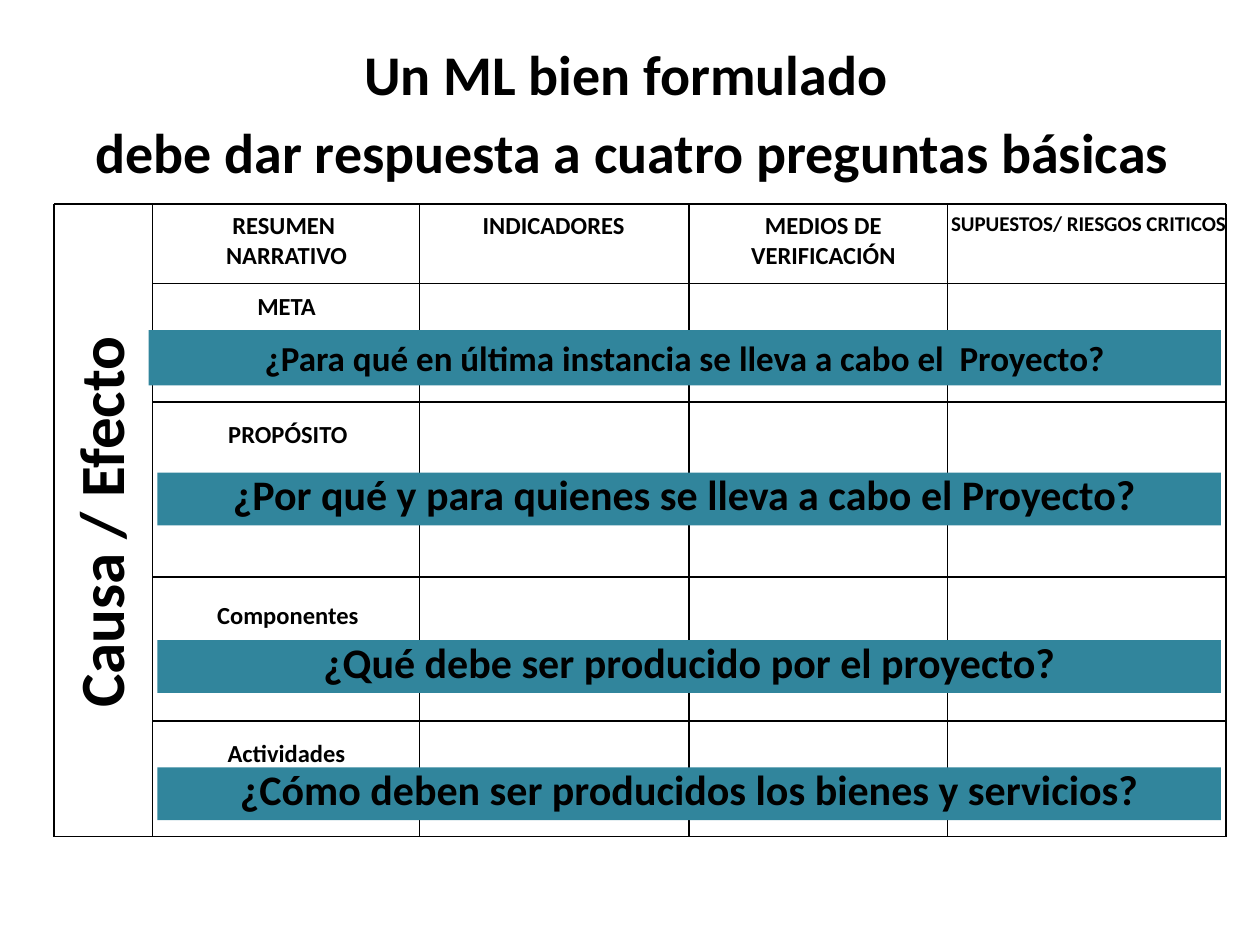
from dataclasses import dataclass

from lxml.etree import SubElement
from pptx import Presentation
from pptx.dml.color import RGBColor
from pptx.enum.shapes import MSO_CONNECTOR, MSO_SHAPE
from pptx.enum.text import MSO_ANCHOR, MSO_AUTO_SIZE, PP_ALIGN
from pptx.oxml.ns import qn
from pptx.util import Inches, Pt

FONT = "Calibri"
BLACK = "000000"
TEAL = "31859C"

# Grid of the matrix
LEFT, RIGHT = 0.43, 9.73
TOP, BOTTOM = 1.62, 6.64
COLUMN_LINES = [LEFT, 1.21, 3.33, 5.47, 7.52, RIGHT]
INNER_ROW_LINES = [2.25, 3.19, 4.58, 5.72]
HEADER_HEIGHT = 0.63
LABEL_WIDTH, LABEL_HEIGHT = 2.13, 0.93
BAR_RIGHT = 9.69


@dataclass
class Label:
    text: str
    left: float
    top: float
    width: float = LABEL_WIDTH
    height: float = LABEL_HEIGHT
    size: int = 14
    rotation: int = 0


@dataclass
class Question:
    text: str
    top: float
    left: float = 1.25
    height: float = 0.42
    size: int = 24
    line_spacing: float = 0.8


HEADERS = [
    Label("RESUMEN \vNARRATIVO", 1.21, TOP, height=HEADER_HEIGHT),
    Label("INDICADORES", 3.33, TOP, height=HEADER_HEIGHT),
    Label("MEDIOS DE\vVERIFICACIÓN", 5.47, TOP, height=HEADER_HEIGHT),
    Label("SUPUESTOS/ RIESGOS CRITICOS", 7.44, TOP, 2.4, HEADER_HEIGHT, 12),
]
ROW_LABELS = [
    Label("META", 1.21, 2.26),
    Label("PROPÓSITO", 1.22, 3.28),
    Label("Componentes", 1.22, 4.71),
    Label("Actividades", 1.21, 5.81),
]
SIDE_LABEL = Label("Causa / Efecto", -1.73, 3.79, 5.04, 0.71, 36, 270)
QUESTIONS = [
    Question("¿Para qué en última instancia se lleva a cabo el  Proyecto?",
             2.62, 1.18, 0.44, 20, 1.0),
    Question("¿Por qué y para quienes se lleva a cabo el Proyecto? ", 3.75),
    Question("¿Qué debe ser producido por el proyecto?", 5.08),
    Question("¿Cómo deben ser producidos los bienes y servicios?", 6.09),
]


def color(value: str) -> RGBColor:
    return RGBColor.from_string(value)


def format_text(text_frame, size: int) -> None:
    text_frame.word_wrap = True
    for paragraph in text_frame.paragraphs:
        paragraph.alignment = PP_ALIGN.CENTER
        for run in paragraph.runs:
            run.font.name = FONT
            run.font.size = Pt(size)
            run.font.bold = True
            run.font.color.rgb = color(BLACK)


def add_label(slide, label: Label):
    shape = slide.shapes.add_textbox(
        Inches(label.left), Inches(label.top),
        Inches(label.width), Inches(label.height))
    shape.rotation = label.rotation
    shape.text_frame.text = label.text
    format_text(shape.text_frame, label.size)
    return shape


def add_line(slide, x1: float, y1: float, x2: float, y2: float) -> None:
    line = slide.shapes.add_connector(
        MSO_CONNECTOR.STRAIGHT, Inches(x1), Inches(y1), Inches(x2), Inches(y2))
    line.line.color.rgb = color(BLACK)
    line.line.width = Pt(1)
    SubElement(line._element.spPr, qn("a:effectLst"))


def add_question(slide, question: Question) -> None:
    bar = slide.shapes.add_shape(
        MSO_SHAPE.RECTANGLE, Inches(question.left), Inches(question.top),
        Inches(BAR_RIGHT - question.left), Inches(question.height))
    bar.shadow.inherit = False
    bar.fill.solid()
    bar.fill.fore_color.rgb = color(TEAL)
    bar.line.fill.background()
    text_frame = bar.text_frame
    text_frame.text = question.text
    text_frame.vertical_anchor = MSO_ANCHOR.TOP
    text_frame.auto_size = MSO_AUTO_SIZE.SHAPE_TO_FIT_TEXT
    text_frame.paragraphs[0].line_spacing = question.line_spacing
    format_text(text_frame, question.size)


def add_title(slide) -> None:
    title = add_label(slide, Label(
        "Un ML bien formulado \ndebe dar respuesta a cuatro preguntas básicas",
        0, 0.16, 10, 1.46, 32))
    text_frame = title.text_frame
    text_frame.vertical_anchor = MSO_ANCHOR.MIDDLE
    text_frame.margin_left = text_frame.margin_right = Inches(0.05)
    text_frame.margin_top = text_frame.margin_bottom = Inches(0.05)
    for paragraph in text_frame.paragraphs:
        paragraph.space_before = Pt(6.4)
        properties = paragraph._p.get_or_add_pPr()
        properties.set("marL", str(Inches(0.46)))
        properties.set("indent", str(Inches(-0.42)))


def main() -> None:
    presentation = Presentation()
    presentation.slide_width = Inches(10)
    presentation.slide_height = Inches(7.5)
    slide = presentation.slides.add_slide(presentation.slide_layouts[6])

    # Matrix texts
    for label in [*ROW_LABELS, SIDE_LABEL, *HEADERS]:
        add_label(slide, label)

    # Matrix lines: outer frame and columns, then inner rows
    for y in (TOP, BOTTOM):
        add_line(slide, LEFT, y, RIGHT, y)
    for x in COLUMN_LINES:
        add_line(slide, x, TOP, x, BOTTOM)
    for y in INNER_ROW_LINES:
        add_line(slide, COLUMN_LINES[1], y, RIGHT, y)

    # Title and question bars
    add_title(slide)
    for question in QUESTIONS:
        add_question(slide, question)

    presentation.save("out.pptx")


if __name__ == "__main__":
    main()
